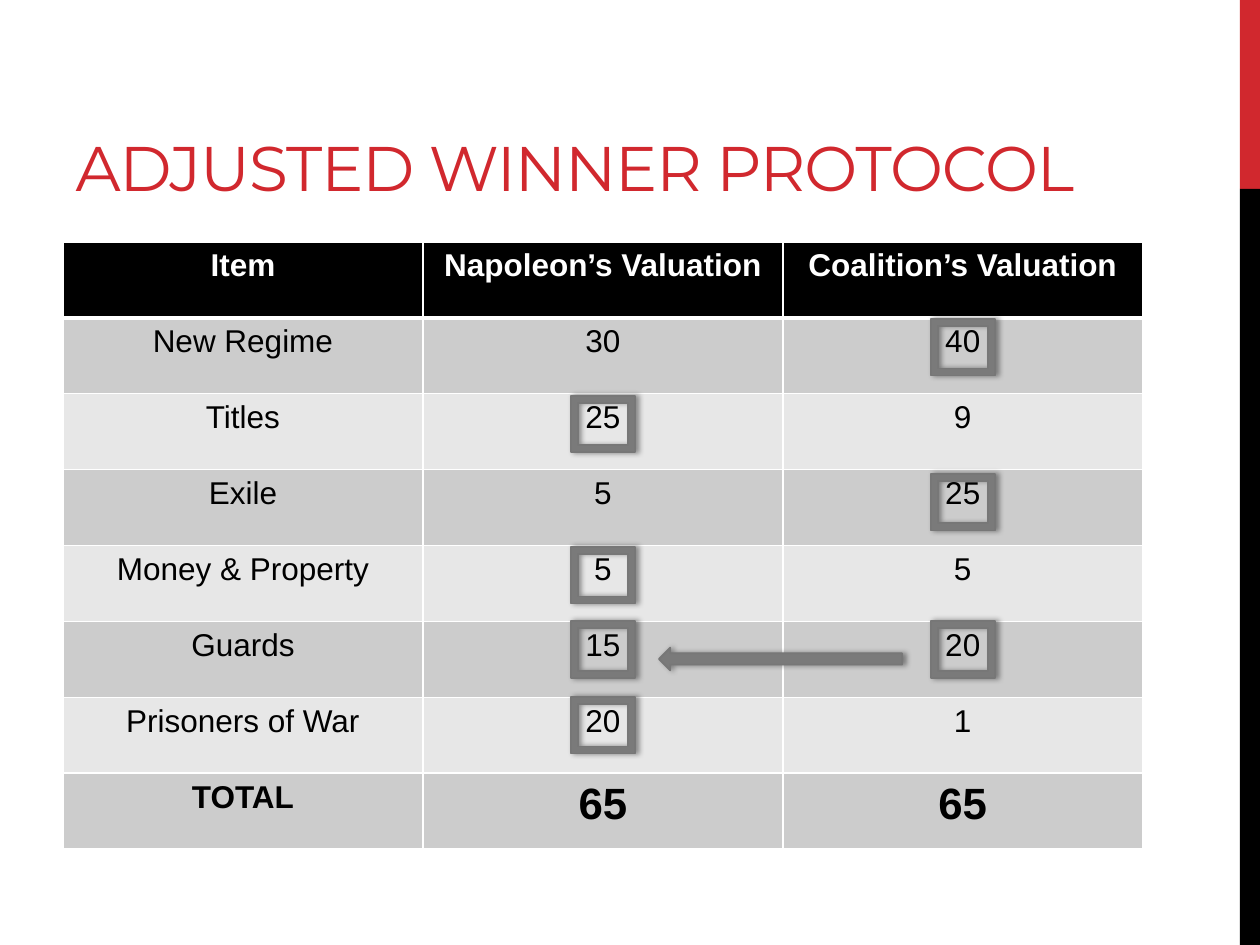
"""Build the Adjusted Winner Protocol slide with its valuation table and marked winners."""
from lxml import etree
from pptx import Presentation
from pptx.dml.color import RGBColor
from pptx.enum.shapes import MSO_SHAPE
from pptx.enum.text import MSO_ANCHOR, PP_ALIGN
from pptx.oxml import parse_xml
from pptx.util import Inches, Pt

FRAME, LEFT_ARROW, RECTANGLE = MSO_SHAPE.FRAME, MSO_SHAPE.LEFT_ARROW, MSO_SHAPE.RECTANGLE
BOTTOM, LEFT, CENTER = MSO_ANCHOR.BOTTOM, PP_ALIGN.LEFT, PP_ALIGN.CENTER

RED = RGBColor(0xD1, 0x28, 0x2E)
BLACK = RGBColor(0, 0, 0)
WHITE = RGBColor(0xFF, 0xFF, 0xFF)
DARK_BAND = RGBColor(0xCC, 0xCC, 0xCC)
LIGHT_BAND = RGBColor(0xE7, 0xE7, 0xE7)
MARK_FILL = RGBColor(0x7A, 0x7A, 0x7A)
MARK_LINE = RGBColor(0x77, 0x77, 0x77)
DRAWING_NS = "http://schemas.openxmlformats.org/drawingml/2006/main"

TITLE = "ADJUSTED WINNER PROTOCOL"
VALUATIONS = [
    ("Item", "Napoleon’s Valuation", "Coalition’s Valuation"),
    ("New Regime", "30", "40"),
    ("Titles", "25", "9"),
    ("Exile", "5", "25"),
    ("Money & Property", "5", "5"),
    ("Guards", "15", "20"),
    ("Prisoners of War", "20", "1"),
    ("TOTAL", "65", "65"),
]
NAPOLEON, COALITION = 1, 2
WINNERS = [(COALITION, 2.53), (NAPOLEON, 3.14), (COALITION, 3.76), (NAPOLEON, 4.34),
           (COALITION, 4.93), (NAPOLEON, 5.53), (NAPOLEON, 4.93)]
SIDE_BARS = [(0, 1.5, RED), (1.5, 6, BLACK)]

TABLE_LEFT, TABLE_TOP, TABLE_WIDTH, TABLE_HEIGHT = 0.5, 1.92, 8.57, 4.82
COLUMN_WIDTH = TABLE_WIDTH / 3
FRAME_WIDTH, FRAME_HEIGHT = 0.51, 0.45


def style_run(run, font, size, color, bold=False):
    run.font.name = font
    run.font.size = Pt(size)
    run.font.color.rgb = color
    run.font.bold = bold


def add_block(slide, preset, left, top, width, height, fill):
    block = slide.shapes.add_shape(
        preset, Inches(left), Inches(top), Inches(width), Inches(height))
    block.shadow.inherit = False
    block.fill.solid()
    block.fill.fore_color.rgb = fill
    block.line.fill.background()
    return block


def add_mark(slide, preset, left, top, width, height):
    mark = add_block(slide, preset, left, top, width, height, MARK_FILL)
    mark.line.color.rgb = MARK_LINE
    mark.line.width = Pt(1)
    effects = mark._element.spPr.find(f"{{{DRAWING_NS}}}effectLst")
    effects.append(parse_xml(
        f'<a:outerShdw xmlns:a="{DRAWING_NS}" blurRad="{Pt(3.1)}" dist="{Pt(1.8)}" dir="0" '
        'rotWithShape="0"><a:srgbClr val="000000"><a:alpha val="40000"/></a:srgbClr>'
        '</a:outerShdw>'))


def set_borders(cell, row):
    widths = {"L": 1, "R": 1, "T": 3 if row == 1 else 1, "B": 3 if row == 0 else 1}
    properties = cell._tc.get_or_add_tcPr()
    for side, width in widths.items():
        border = etree.SubElement(properties, f"{{{DRAWING_NS}}}ln{side}", w=str(Pt(width)))
        fill = etree.SubElement(border, f"{{{DRAWING_NS}}}solidFill")
        etree.SubElement(fill, f"{{{DRAWING_NS}}}srgbClr", val=str(WHITE))


def add_title(slide):
    title = slide.shapes.title
    title.left, title.top = Inches(0.5), Inches(0.17)
    title.width, title.height = Inches(9.01), Inches(1.5)
    title.text_frame.text = TITLE
    title.text_frame.vertical_anchor = BOTTOM
    heading = title.text_frame.paragraphs[0]
    heading.alignment = LEFT
    style_run(heading.runs[0], "Montserrat", 36, RED)
    heading.runs[0].font._element.set("spc", "-60")


def add_valuations(slide):
    table = slide.shapes.add_table(
        len(VALUATIONS), len(VALUATIONS[0]), Inches(TABLE_LEFT), Inches(TABLE_TOP),
        Inches(TABLE_WIDTH), Inches(TABLE_HEIGHT)).table
    total_row = len(VALUATIONS) - 1
    for row, values in enumerate(VALUATIONS):
        is_header, is_total = row == 0, row == total_row
        band = BLACK if is_header else DARK_BAND if row % 2 else LIGHT_BAND
        for column, value in enumerate(values):
            cell = table.cell(row, column)
            set_borders(cell, row)
            cell.fill.solid()
            cell.fill.fore_color.rgb = band
            cell.text_frame.text = value
            paragraph = cell.text_frame.paragraphs[0]
            paragraph.alignment = CENTER
            size = 25 if is_total and column else 18
            style_run(paragraph.runs[0], "Arial", size, WHITE if is_header else BLACK,
                      is_header or is_total)


def main():
    presentation = Presentation()
    presentation.slide_width, presentation.slide_height = Inches(10), Inches(7.5)
    slide = presentation.slides.add_slide(presentation.slide_layouts[5])
    for top, height, color in SIDE_BARS:
        add_block(slide, RECTANGLE, 9.84, top, 0.16, height, color)
    add_title(slide)
    add_valuations(slide)
    for column, top in WINNERS:
        left = TABLE_LEFT + (column + 0.5) * COLUMN_WIDTH - FRAME_WIDTH / 2
        add_mark(slide, FRAME, left, top, FRAME_WIDTH, FRAME_HEIGHT)
    add_mark(slide, LEFT_ARROW, 5.23, 5.14, 1.93, 0.18)
    presentation.save("out.pptx")


if __name__ == "__main__":
    main()
